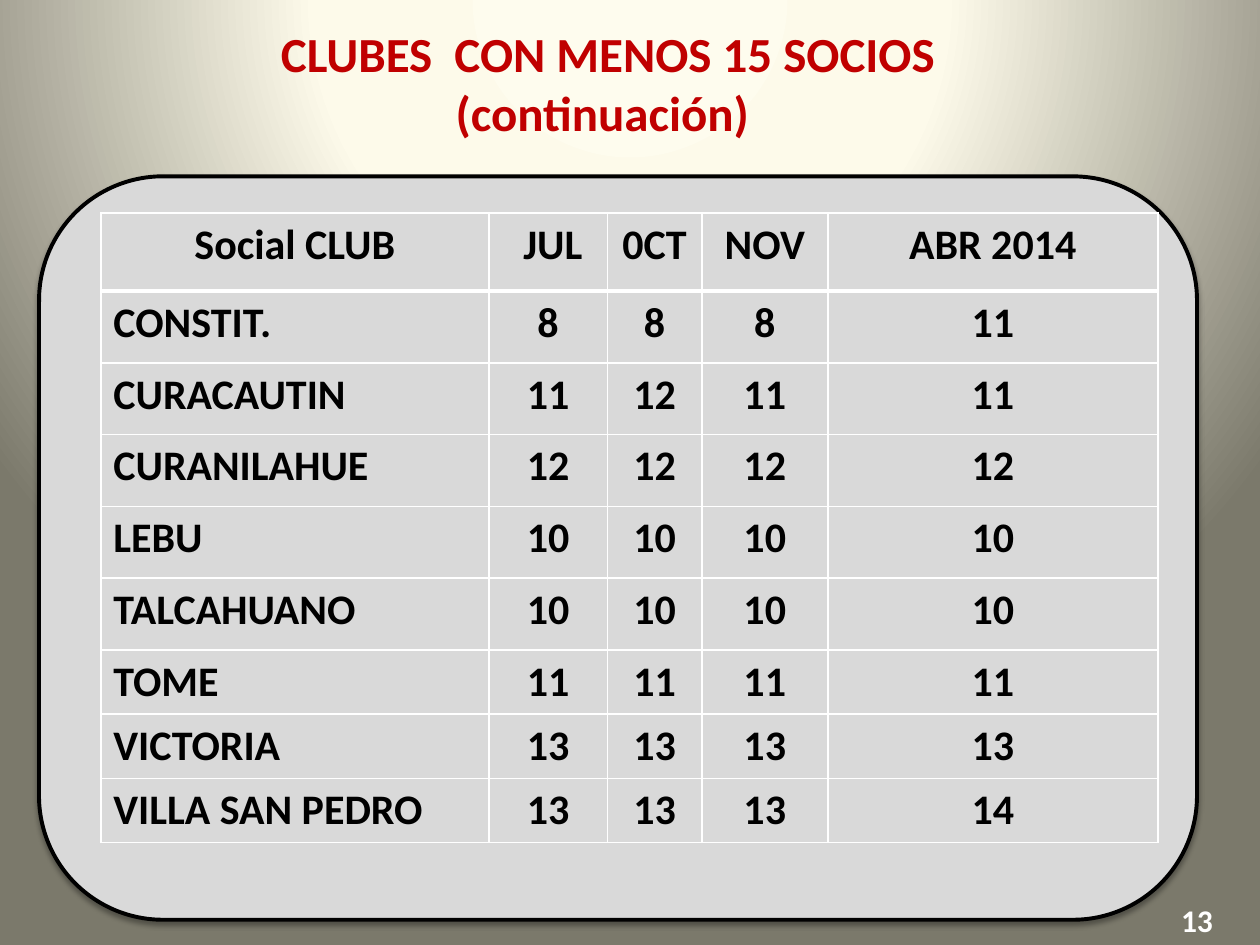
from pptx import Presentation
from pptx.dml.color import RGBColor
from pptx.enum.shapes import MSO_SHAPE as Shape
from pptx.enum.text import MSO_AUTO_SIZE as AutoSize, PP_ALIGN as Align
from pptx.oxml import parse_xml
from pptx.oxml.ns import nsdecls, qn
from pptx.util import Inches, Pt

COLORS = {
    "title": "C00000", "text": "000000", "white": "FFFFFF", "panel": "D9D9D9",
    "glow": "FEFCEE", "cream": "FDFAEA", "olive": "7B796B",
}
HEADERS = ["Social CLUB", " JUL", "0CT", "NOV", "ABR 2014"]
CLUBS = [
    ("CONSTIT.", 8, 8, 8, 11),
    ("CURACAUTIN", 11, 12, 11, 11),
    ("CURANILAHUE", 12, 12, 12, 12),
    ("LEBU", 10, 10, 10, 10),
    ("TALCAHUANO", 10, 10, 10, 10),
    ("TOME", 11, 11, 11, 11),
    ("VICTORIA", 13, 13, 13, 13),
    ("VILLA SAN PEDRO", 13, 13, 13, 14),
]
COLUMN_WIDTHS = [3.08, 0.94, 0.75, 1, 2.62]
ROW_HEIGHTS = [0.62] + [0.57] * 5 + [0.51] * 3


class SlideBuilder:
    font = "Calibri"

    def __init__(self, slide):
        self.slide = slide

    def color(self, name):
        return RGBColor.from_string(COLORS[name])

    def background(self, stops):
        """Fill the page with a round glow centred above its top edge."""
        marks = "".join(
            f'<a:gs pos="{percent * 1000}"><a:srgbClr val="{COLORS[name]}"/></a:gs>'
            for percent, name in stops)
        self.slide.element.cSld.insert(0, parse_xml(
            f'<p:bg {nsdecls("p", "a")}><p:bgPr><a:gradFill rotWithShape="1">'
            f'<a:gsLst>{marks}</a:gsLst><a:path path="circle">'
            '<a:fillToRect l="50000" t="-80000" r="50000" b="180000"/></a:path>'
            '</a:gradFill><a:effectLst/></p:bgPr></p:bg>'))

    def add_span(self, para, text, size, color, align=Align.CENTER):
        para.alignment = align
        span = para.add_run()
        span.text = text
        span.font.name = self.font
        span.font.size = Pt(size)
        span.font.bold = True
        span.font.color.rgb = self.color(color)

    def text(self, left, top, width, height, lines, size, color, wrap=True):
        box = self.slide.shapes.add_textbox(
            Inches(left), Inches(top), Inches(width), Inches(height))
        frame = box.text_frame
        frame.word_wrap = wrap
        frame.auto_size = AutoSize.NONE if wrap else AutoSize.SHAPE_TO_FIT_TEXT
        for index, line in enumerate(lines):
            para = frame.add_paragraph() if index else frame.paragraphs[0]
            self.add_span(para, line, size, color)

    def panel(self, left, top, width, height):
        panel = self.slide.shapes.add_shape(
            Shape.ROUNDED_RECTANGLE,
            Inches(left), Inches(top), Inches(width), Inches(height))
        panel.fill.solid()
        panel.fill.fore_color.rgb = self.color("panel")
        panel.line.color.rgb = self.color("text")
        panel.line.width = Pt(2.25)
        panel.shadow.inherit = False
        effects = panel.element.spPr.find(qn("a:effectLst"))
        effects.append(parse_xml(
            f'<a:outerShdw {nsdecls("a")} blurRad="{Pt(3.1)}" dist="{Pt(1.8)}" '
            f'dir="5400000" rotWithShape="0"><a:srgbClr val="{COLORS["text"]}">'
            '<a:alpha val="35000"/></a:srgbClr></a:outerShdw>'))

    def borders(self, cell, **widths):
        properties = cell._tc.get_or_add_tcPr()
        for side in "LRTB":
            properties.append(parse_xml(
                f'<a:ln{side} {nsdecls("a")} w="{Pt(widths.get(side, 1))}">'
                f'<a:solidFill><a:srgbClr val="{COLORS["white"]}"/></a:solidFill>'
                f'</a:ln{side}>'))

    def table(self, left, top, rows, widths, heights):
        table = self.slide.shapes.add_table(
            len(rows), len(widths), Inches(left), Inches(top),
            Inches(sum(widths)), Inches(sum(heights))).table
        table.horz_banding = False
        for column, width in zip(table.columns, widths):
            column.width = Inches(width)
        for row, height in zip(table.rows, heights):
            row.height = Inches(height)
        header_rule = {0: {"B": 3}, 1: {"T": 3}}
        for r, values in enumerate(rows):
            for c, value in enumerate(values):
                cell = table.cell(r, c)
                self.borders(cell, **header_rule.get(r, {}))
                cell.fill.background()
                align = Align.LEFT if r and c == 0 else Align.CENTER
                self.add_span(cell.text_frame.paragraphs[0], str(value), 24, "text", align)


def main():
    deck = Presentation()
    deck.slide_width, deck.slide_height = Inches(10), Inches(7.5)
    page = SlideBuilder(deck.slides.add_slide(deck.slide_layouts[6]))
    page.background([(0, "glow"), (40, "cream"), (100, "olive")])
    page.text(9.01, 7.1, 0.98, 0.4, ["13"], 18, "white")
    page.text(2.01, 0.14, 5.54, 1.04,
              [" CLUBES  CON MENOS 15 SOCIOS", "(continuación)"], 28, "title", wrap=False)
    page.panel(0.31, 1.4, 9.19, 5.9)
    page.table(0.8, 1.69, [HEADERS, *CLUBS], COLUMN_WIDTHS, ROW_HEIGHTS)
    deck.save("out.pptx")


if __name__ == "__main__":
    main()
